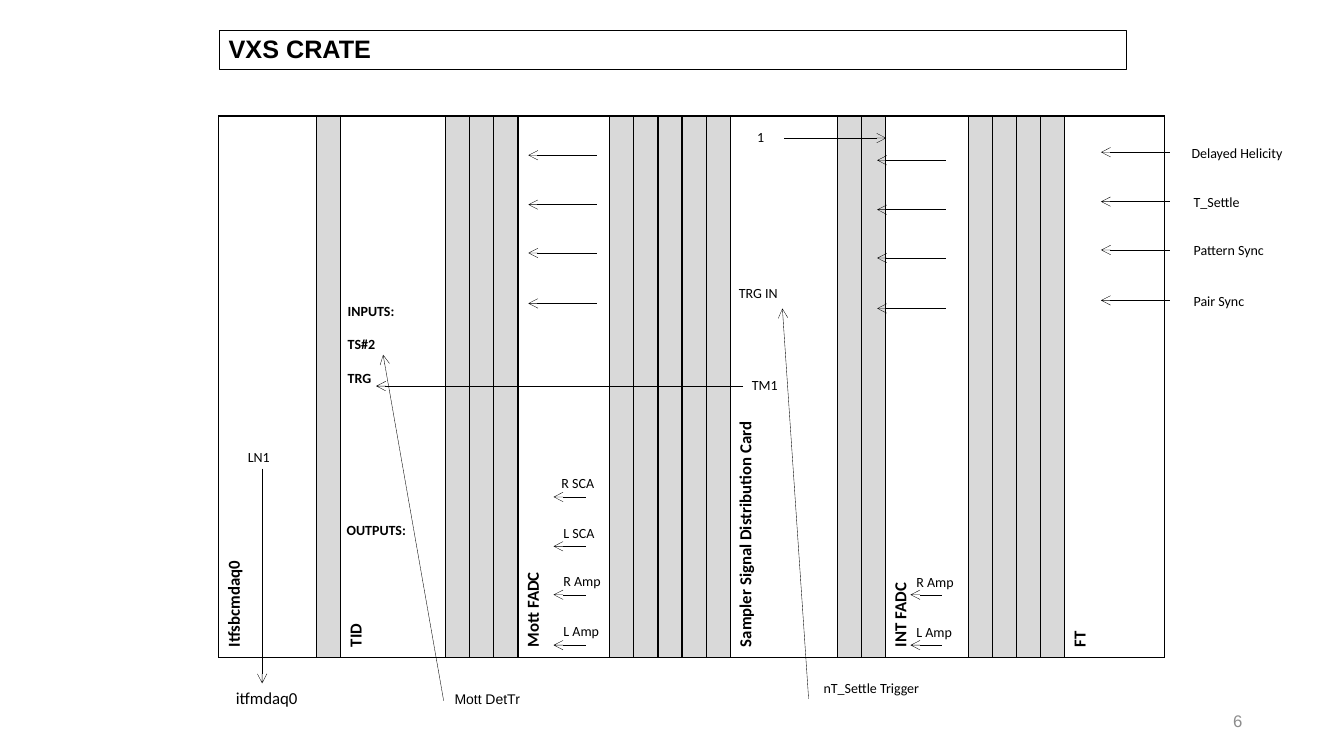
import pptx
import pptx.util
import pptx.dml.color
import pptx.enum.shapes
import pptx.enum.text
import pptx.oxml
import pptx.oxml.ns

PX = 9144  # EMU per px, 100 px to the inch
BLACK = pptx.dml.color.RGBColor(0x00, 0x00, 0x00)
SPACER_GREY = pptx.dml.color.RGBColor(0xD9, 0xD9, 0xD9)
NUMBER_GREY = pptx.dml.color.RGBColor(0x8C, 0x8C, 0x8C)
THIN = 0.25

BODY = {"size": pptx.util.Pt(10), "name": "Calibri", "bold": False}
BOLD = {**BODY, "bold": True}
CARD = {**BOLD, "size": pptx.util.Pt(12)}
HOST = {**BODY, "size": pptx.util.Pt(12)}
ARIAL = {**BODY, "name": "Arial"}
HEADING = {**BOLD, "size": pptx.util.Pt(18), "name": "Arial"}
NUMBER = {**HOST, "name": "Arial"}

# Crate: card name, width, grey slots to its right
CARDS = [
    ("Itfsbcmdaq0", 97, 1),
    ("TID", 104, 3),
    ("Mott FADC", 91, 5),
    ("Sampler Signal Distribution Card", 106, 2),
    ("INT FADC", 82, 4),
    ("FT", 99, 0),
]
CRATE_LEFT, CRATE_TOP, CRATE_HEIGHT, SLOT_WIDTH = 217, 115, 537, 23

# Signal groups: arrow from x, to x, first row y, labels, label lefts, label rise
ROW_STEPS = [0, 49, 97, 147]
SIGNALS = [
    (1160, 1092, 151, ["Delayed Helicity", "T_Settle", "Pattern Sync", "Pair Sync"],
     [1172, 1174, 1174, 1174], 13),
    (938, 870, 159, [""] * 4, [0] * 4, 0),
    (592, 524, 154, [""] * 4, [0] * 4, 0),
    (581, 549, 493, ["R SCA", "L SCA", "R Amp", "L Amp"], [547, 549, 549, 549], 27),
    (934, 903, 493, [None, None, "R Amp", "L Amp"], [899] * 4, 26),
]
SIGNAL_LABEL_WIDTH, LABEL_HEIGHT = 115, 27

LINKS = [
    (260, 465, 260, 678),
    (737, 383, 373, 383),
    (778, 137, 879, 137),
    (440, 695, 380, 352),
    (802, 693, 776, 306),
]

# Lines of text, left, top, width, format
LABELS = [
    (["itfmdaq0"], 224, 677, 93, HOST),
    (["OUTPUTS:"], 334, 512, 84, BOLD),
    (["1"], 741, 123, 35, BODY),
    (["LN1"], 236, 440, 50, BODY),
    (["TM1"], 736, 369, 66, BODY),
    (["INPUTS:", "TS#2", "TRG"], 335, 295, 75, BOLD),
    (["Mott DetTr"], 441, 680, 97, ARIAL),
    (["nT_Settle Trigger"], 807, 669, 135, BODY),
    (["TRG IN"], 723, 277, 66, BODY),
]

deck = pptx.Presentation()
deck.slide_width, deck.slide_height = 1333 * PX, 750 * PX
slide = deck.slides.add_slide(deck.slide_layouts[6])


def write(paragraph, text, style, color=BLACK):
    run = paragraph.add_run()
    run.text = text
    for key, value in style.items():
        setattr(run.font, key, value)
    run.font.color.rgb = color


def add_label(lines, left, top, width, style, height=LABEL_HEIGHT, color=BLACK):
    box = slide.shapes.add_textbox(left * PX, top * PX, width * PX, height * PX)
    box.text_frame.word_wrap = True
    for index, line in enumerate(lines):
        if index:
            paragraph = box.text_frame.add_paragraph()
            paragraph.space_before = pptx.util.Pt(12)
        else:
            paragraph = box.text_frame.paragraphs[0]
        write(paragraph, line, style, color)
    return box


def add_arrow(*ends):
    arrow = slide.shapes.add_connector(
        pptx.enum.shapes.MSO_CONNECTOR.STRAIGHT, *[end * PX for end in ends])
    arrow.line.color.rgb = BLACK
    arrow.line.width = pptx.util.Pt(THIN)
    outline = arrow.line._get_or_add_ln()
    outline.append(pptx.oxml.parse_xml(
        f'<a:tailEnd {pptx.oxml.ns.nsdecls("a")} type="arrow"/>'))
    outline.getparent().append(pptx.oxml.parse_xml(
        f'<a:effectLst {pptx.oxml.ns.nsdecls("a")}/>'))


def add_borders(cell):
    properties = cell._tc.get_or_add_tcPr()
    for index, side in enumerate(["lnL", "lnR", "lnT", "lnB"]):
        properties.insert(index, pptx.oxml.parse_xml(
            f'<a:{side} {pptx.oxml.ns.nsdecls("a")} w="12700">'
            f'<a:solidFill><a:srgbClr val="{BLACK}"/></a:solidFill></a:{side}>'))


def add_crate():
    slots = []
    for name, width, spacers in CARDS:
        slots += [(name, width)] + [("", SLOT_WIDTH)] * spacers
    total = sum(width for _, width in slots)
    crate = slide.shapes.add_table(1, len(slots), CRATE_LEFT * PX, CRATE_TOP * PX,
                                   total * PX, CRATE_HEIGHT * PX).table
    crate.first_row = crate.horz_banding = False
    for column, (name, width) in enumerate(slots):
        crate.columns[column].width = width * PX
        cell = crate.cell(0, column)
        if name:
            cell.fill.background()
            cell._tc.get_or_add_tcPr().set("vert", "vert270")
            write(cell.text_frame.paragraphs[0], name, CARD)
        else:
            cell.fill.solid()
            cell.fill.fore_color.rgb = SPACER_GREY
        add_borders(cell)


heading = add_label(["VXS CRATE"], 217, 30, 900, HEADING, 39)
heading.line.color.rgb = BLACK
heading.line.width = pptx.util.Pt(THIN)
heading.text_frame.vertical_anchor = pptx.enum.text.MSO_ANCHOR.MIDDLE
heading.text_frame.paragraphs[0].line_spacing = 0.9

add_crate()
for link in LINKS:
    add_arrow(*link)
for start, end, first, names, lefts, rise in SIGNALS:
    for step, name, left in zip(ROW_STEPS, names, lefts):
        if name is None:
            continue
        add_arrow(start, first + step, end, first + step)
        if name:
            add_label([name], left, first + step - rise, SIGNAL_LABEL_WIDTH, BODY)
for label in LABELS:
    add_label(*label)

number = add_label(["6"], 942, 695, 300, NUMBER, 40, NUMBER_GREY)
number.text_frame.vertical_anchor = pptx.enum.text.MSO_ANCHOR.MIDDLE
number.text_frame.paragraphs[0].alignment = pptx.enum.text.PP_ALIGN.RIGHT

deck.save("out.pptx")
